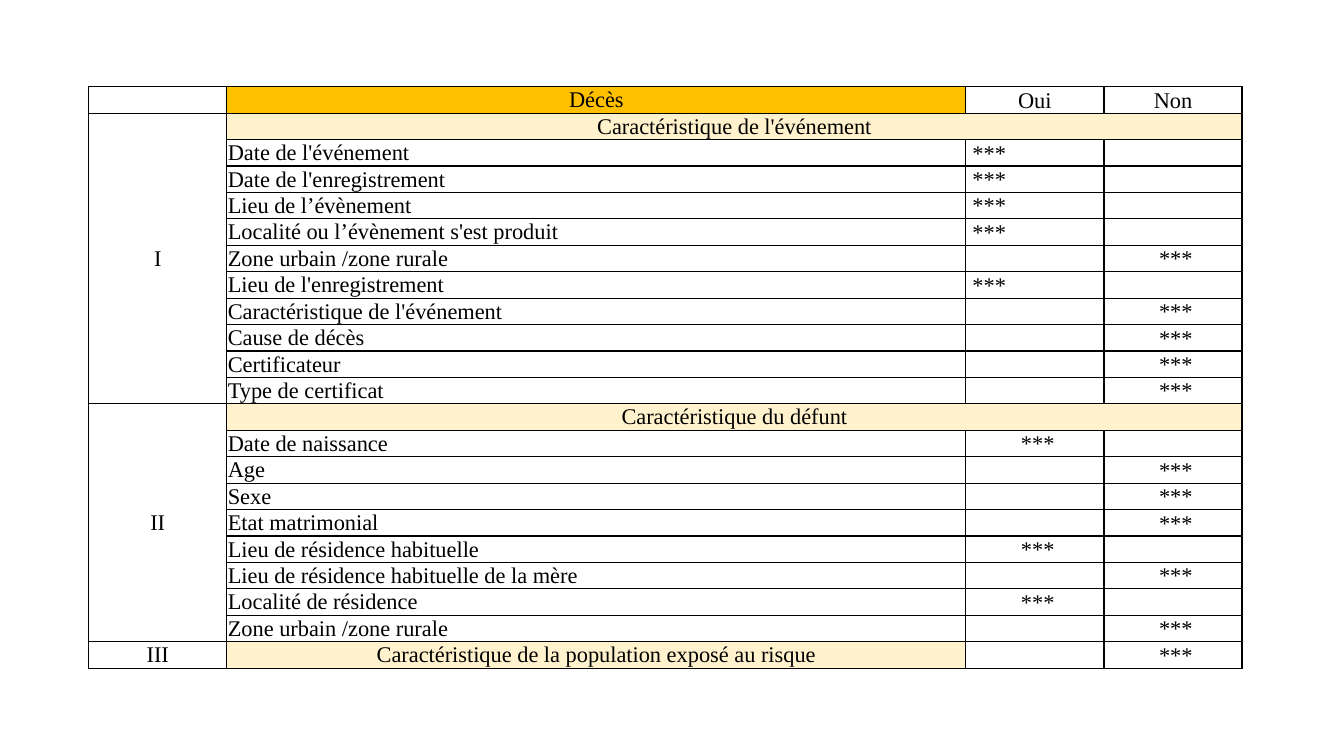
from dataclasses import dataclass

from pptx import Presentation
from pptx.dml.color import RGBColor as RGB
from pptx.enum.text import MSO_ANCHOR as ANCHOR, PP_ALIGN as ALIGN
from pptx.oxml.ns import qn
from pptx.util import Inches, Pt
from lxml.etree import SubElement

HEADER = ("", "Décès", "Oui", "Non")
MARK = " ***"
OUI, NON = 2, 3
SECTIONS = [
    ("I", "Caractéristique de l'événement", ALIGN.LEFT, [
        ("Date de l'événement", OUI),
        ("Date de l'enregistrement", OUI),
        ("Lieu de l’évènement", OUI),
        ("Localité ou l’évènement s'est produit", OUI),
        ("Zone urbain /zone rurale", NON),
        ("Lieu de l'enregistrement", OUI),
        ("Caractéristique de l'événement", NON),
        ("Cause de décès", NON),
        ("Certificateur", NON),
        ("Type de certificat", NON),
    ]),
    ("II", "Caractéristique du défunt", ALIGN.CENTER, [
        ("Date de naissance", OUI),
        ("Age", NON),
        ("Sexe", NON),
        ("Etat matrimonial", NON),
        ("Lieu de résidence habituelle", OUI),
        ("Lieu de résidence habituelle de la mère", NON),
        ("Localité de résidence", OUI),
        ("Zone urbain /zone rurale", NON),
    ]),
]
EXPOSED = ("III", "Caractéristique de la population exposé au risque", NON)
COLUMNS = (1.37, 7.33, 1.37, 1.37)
LEFT, TOP, HEIGHT = 0.88, 0.86, 5.77


@dataclass(frozen=True)
class Theme:
    font: str = "Times New Roman"
    size: int = 16
    ink: str = "000000"
    header: str = "FFC000"
    section: str = "FFF2CC"


THEME = Theme()


def add_borders(cell):
    pr = cell._tc.get_or_add_tcPr()
    for side in ("a:lnL", "a:lnR", "a:lnT", "a:lnB"):
        ln = SubElement(pr, qn(side), w=str(Pt(1)))
        fill = SubElement(ln, qn("a:solidFill"))
        SubElement(fill, qn("a:srgbClr"), val=THEME.ink)


def style_blank(cell):
    add_borders(cell)
    cell.fill.background()
    cell.margin_left = cell.margin_right = Inches(0.01)
    cell.margin_top, cell.margin_bottom = Pt(0.5), 0
    p = cell.text_frame.paragraphs[0]
    SubElement(p._p, qn("a:endParaRPr"), sz=str(THEME.size * 100))
    p.font.name, p.font.size = THEME.font, Pt(THEME.size)
    p.font.color.rgb = RGB.from_string(THEME.ink)


def write(cell, text, align=ALIGN.CENTER, anchor=ANCHOR.MIDDLE, fill=None):
    p = cell.text_frame.paragraphs[0]
    p.add_run().text = text
    p.alignment = align
    cell.vertical_anchor = anchor
    if fill:
        cell.fill.solid()
        cell.fill.fore_color.rgb = RGB.from_string(fill)


def fill_table(table):
    for col, text in enumerate(HEADER):
        if text:
            write(table.cell(0, col), text,
                  anchor=ANCHOR.MIDDLE if col == 1 else ANCHOR.BOTTOM,
                  fill=THEME.header if col == 1 else None)
    row = 1
    for numeral, title, oui_align, items in SECTIONS:
        last = row + len(items)
        table.cell(row, 0).merge(table.cell(last, 0))
        table.cell(row, 1).merge(table.cell(row, NON))
        write(table.cell(row, 0), numeral)
        write(table.cell(row, 1), title, fill=THEME.section)
        for r, (label, answer) in enumerate(items, row + 1):
            write(table.cell(r, 1), label, ALIGN.LEFT)
            write(table.cell(r, answer), MARK,
                  oui_align if answer == OUI else ALIGN.CENTER, ANCHOR.BOTTOM)
        row = last + 1
    numeral, title, answer = EXPOSED
    write(table.cell(row, 0), numeral)
    write(table.cell(row, 1), title, fill=THEME.section)
    write(table.cell(row, answer), MARK, anchor=ANCHOR.BOTTOM)


def main():
    prs = Presentation()
    prs.slide_width, prs.slide_height = Inches(13.33), Inches(7.5)
    s = prs.slides.add_slide(prs.slide_layouts[6])
    rows = 2 + sum(1 + len(items) for *_, items in SECTIONS)
    table = s.shapes.add_table(rows, len(COLUMNS), Inches(LEFT), Inches(TOP),
                               Inches(sum(COLUMNS)), Inches(HEIGHT)).table
    table.first_row = table.horz_banding = False
    for column, width in zip(table.columns, COLUMNS):
        column.width = Inches(width)
    for cell in table.iter_cells():
        style_blank(cell)
    fill_table(table)
    prs.save("out.pptx")


if __name__ == "__main__":
    main()
